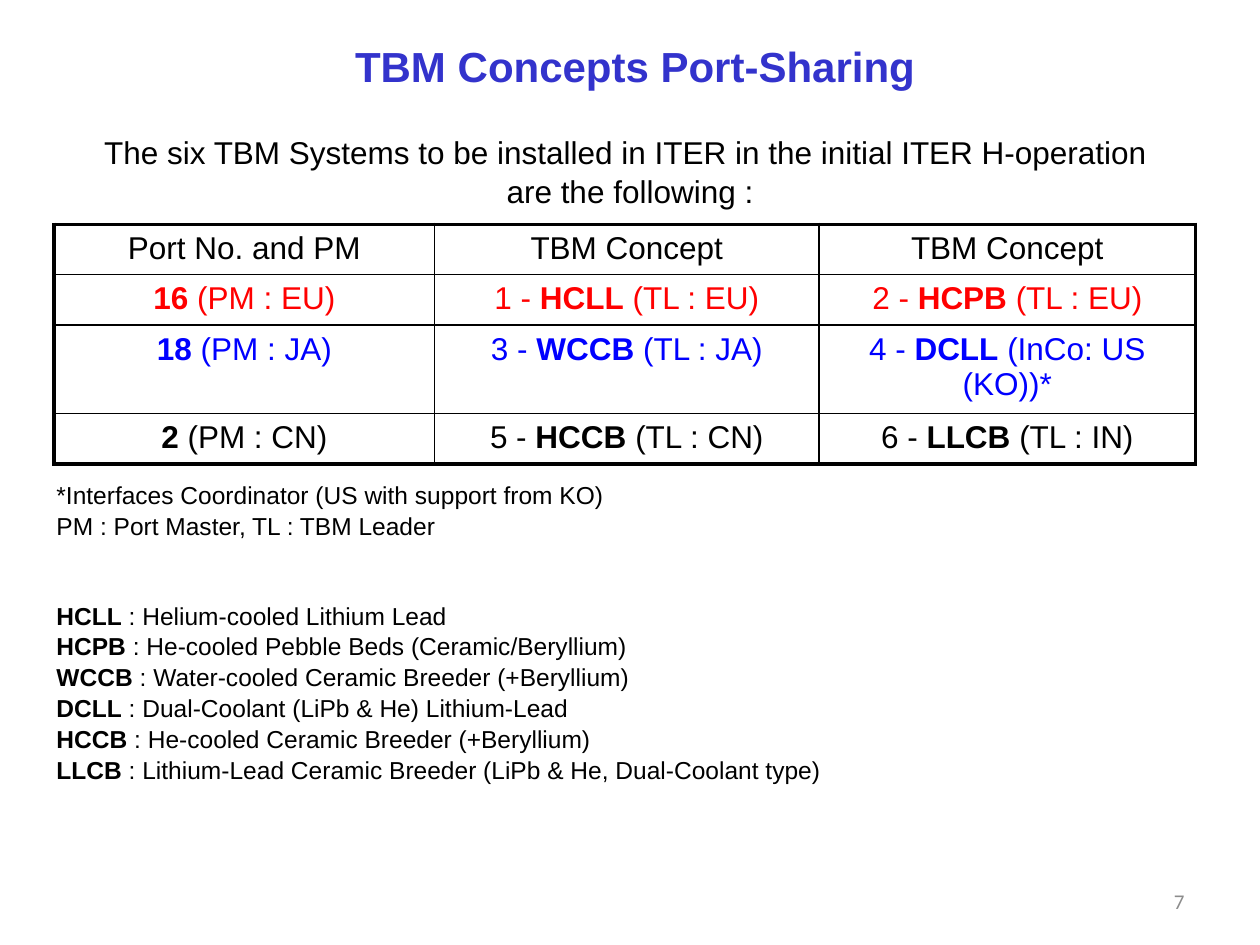
from lxml import etree
from pptx import Presentation
from pptx import util as u
from pptx.dml.color import RGBColor
from pptx.enum import text
from pptx.oxml import ns

Inches, Pt = u.Inches, u.Pt
COLORS = {"title": "3333CC", "ink": "000000", "eu": "FF0000", "ja": "0000FF", "number": "8C8C8C"}
ALIGN = text.PP_ALIGN

PORTS = [
    ("ink", ["Port No. and PM", "TBM Concept", "TBM Concept"]),
    ("eu", ["**16** (PM : EU)", "1 -** HCLL** (TL : EU)", "2 -** HCPB** (TL : EU)"]),
    ("ja", ["**18** (PM : JA)", "3 -** WCCB** (TL : JA)", "4 -** DCLL** (InCo: US (KO))*"]),
    ("ink", ["**2** (PM : CN)", "5 -** HCCB** (TL : CN)", "6 -** LLCB** (TL : IN)"]),
]
INTRO = [
    "The six TBM Systems to be installed in ITER in the initial ITER H-operation ",
    "are the following :",
]
FOOTNOTES = [
    "*Interfaces Coordinator (US with support from KO)",
    "PM : Port Master, TL : TBM Leader",
]
ACRONYMS = [
    "**HCLL** : Helium-cooled Lithium Lead",
    "**HCPB** : He-cooled Pebble Beds (Ceramic/Beryllium)",
    "**WCCB** : Water-cooled Ceramic Breeder (+Beryllium)",
    "**DCLL** : Dual-Coolant (LiPb & He) Lithium-Lead",
    "**HCCB** : He-cooled Ceramic Breeder (+Beryllium)",
    "**LLCB** : Lithium-Lead Ceramic Breeder (LiPb & He, Dual-Coolant type)",
]


def write(p, line, size, color="ink", align=ALIGN.LEFT, font="Arial", bold=False):
    p.alignment = align
    for i, part in enumerate(line.split("**")):
        if part:
            r = p.add_run()
            r.text = part
            r.font.name = font
            r.font.size = Pt(size)
            r.font.bold = bold or i % 2 == 1
            r.font.color.rgb = RGBColor.from_string(COLORS[color])


def add_text(slide, box, lines, size, spacing=1.05, **style):
    tf = slide.shapes.add_textbox(*map(Inches, box)).text_frame
    tf.word_wrap = True
    for i, line in enumerate(lines):
        p = tf.add_paragraph() if i else tf.paragraphs[0]
        p.line_spacing = spacing
        write(p, line, size, **style)
    return tf


def add_title(slide, box):
    sp = slide.shapes.title
    sp.left, sp.top, sp.width, sp.height = map(Inches, box)
    tf = sp.text_frame
    tf.vertical_anchor = text.MSO_ANCHOR.MIDDLE
    write(tf.paragraphs[0], "TBM Concepts Port-Sharing", 24, "title", ALIGN.CENTER, bold=True)


def set_borders(cell, widths):
    tcPr = cell._tc.get_or_add_tcPr()
    for i, (side, width) in enumerate(widths.items()):
        ln = etree.Element(ns.qn(f"a:ln{side}"), w=str(Pt(width)))
        fill = etree.SubElement(ln, ns.qn("a:solidFill"))
        etree.SubElement(fill, ns.qn("a:srgbClr"), val=COLORS["ink"])
        tcPr.insert(i, ln)


def add_port_table(slide, box):
    widths, heights = [3.02, 3.05, 2.99], [0.4, 0.4, 0.7, 0.4]
    table = slide.shapes.add_table(len(heights), len(widths), *map(Inches, box)).table
    table.first_row = table.horz_banding = False
    for col, width in zip(table.columns, widths):
        col.width = Inches(width)
    for row, height in zip(table.rows, heights):
        row.height = Inches(height)
    last_row, last_col = len(heights) - 1, len(widths) - 1
    for i, (color, entries) in enumerate(PORTS):
        for j, entry in enumerate(entries):
            cell = table.cell(i, j)
            cell.fill.background()
            write(cell.text_frame.paragraphs[0], entry, 18, color, ALIGN.CENTER)
            outer = {"L": j == 0, "R": j == last_col, "T": i == 0, "B": i == last_row}
            set_borders(cell, {side: 2.25 if edge else 1 for side, edge in outer.items()})


def add_notes_block(slide, box):
    tf = add_text(slide, box, FOOTNOTES + ACRONYMS, 14)
    tf.paragraphs[len(FOOTNOTES)].space_before = Pt(33.6)


def add_page_number(slide, box):
    tf = add_text(slide, box, ["7"], 12, spacing=1.0, color="number", align=ALIGN.RIGHT, font="Calibri")
    tf.vertical_anchor = text.MSO_ANCHOR.MIDDLE


def main():
    prs = Presentation()
    prs.slide_width, prs.slide_height = Inches(10), Inches(7.5)
    slide = prs.slides.add_slide(prs.slide_layouts[5])
    add_title(slide, (0.43, 0.25, 9.22, 0.55))
    add_text(slide, (0.43, 0.99, 9.14, 0.7), INTRO, 18, align=ALIGN.CENTER)
    add_port_table(slide, (0.43, 1.78, 9.06, 1.9))
    add_notes_block(slide, (0.35, 3.75, 9.1, 2.69))
    add_page_number(slide, (7.17, 6.95, 2.33, 0.4))
    prs.save("out.pptx")


if __name__ == "__main__":
    main()
